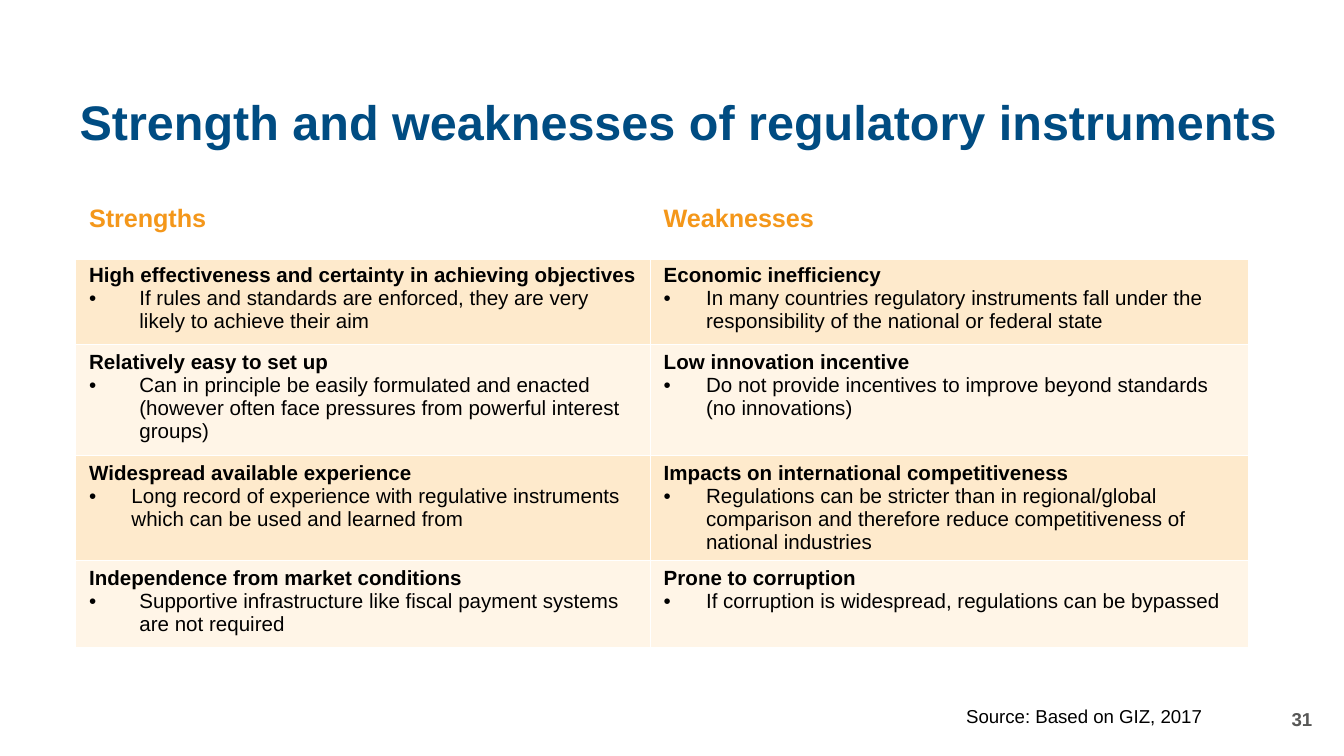
from lxml.etree import SubElement
from pptx import Presentation
from pptx.dml.color import RGBColor
from pptx.enum.text import MSO_ANCHOR as Anchor, MSO_AUTO_SIZE as AutoSize, PP_ALIGN as Align
from pptx.oxml.ns import qn
from pptx.util import Cm, Pt

BLUE = RGBColor(0x00, 0x4C, 0x82)
ORANGE = RGBColor(0xF4, 0x97, 0x1A)
PEACH = RGBColor(0xFE, 0xEA, 0xCC)
CREAM = RGBColor(0xFF, 0xF5, 0xE7)
GREY = RGBColor(0x57, 0x57, 0x56)
BLACK = RGBColor(0, 0, 0)
WHITE = RGBColor(0xFF, 0xFF, 0xFF)

WIDE, NARROW = 0.95, 0.8
HEADERS = ["Strengths", "Weaknesses"]
ROWS = [
    [("High effectiveness and certainty in achieving objectives",
      "If rules and standards are enforced, they are very likely to achieve their aim", WIDE),
     ("Economic inefficiency",
      "In many countries regulatory instruments fall under the responsibility of the national "
      "or federal state", NARROW)],
    [("Relatively easy to set up",
      "Can in principle be easily formulated and enacted (however often face pressures from "
      "powerful interest groups)", WIDE),
     ("Low innovation incentive",
      "Do not provide incentives to improve beyond standards (no innovations)", NARROW)],
    [("Widespread available experience",
      "Long record of experience with regulative instruments which can be used and learned from",
      NARROW),
     ("Impacts on international competitiveness",
      "Regulations can be stricter than in regional/global comparison and therefore reduce "
      "competitiveness of national industries", NARROW)],
    [("Independence from market conditions",
      "Supportive infrastructure like fiscal payment systems are not required", WIDE),
     ("Prone to corruption",
      "If corruption is widespread, regulations can be bypassed", NARROW)],
]


class Deck:
    """Holds the text style and the current slide, and adds elements to it."""

    font = "Arial"

    def __init__(self, width, height):
        self.prs = Presentation()
        self.prs.slide_width, self.prs.slide_height = Cm(width), Cm(height)
        self.s = self.prs.slides.add_slide(self.prs.slide_layouts[5])

    def style(self, p, size, color, bold=False):
        for r in p.runs:
            r.font.name, r.font.size, r.font.bold = self.font, Pt(size), bold
            r.font.color.rgb = color

    def title(self, text, left, top, width, height):
        sp = self.s.shapes.title
        sp.left, sp.top, sp.width, sp.height = Cm(left), Cm(top), Cm(width), Cm(height)
        tf = sp.text_frame
        tf.text = text
        tf.vertical_anchor = Anchor.MIDDLE
        tf.auto_size = AutoSize.NONE
        p = tf.paragraphs[0]
        p.alignment, p.line_spacing = Align.LEFT, 0.9
        self.style(p, 26, BLUE, True)

    def text(self, text, left, top, width, height, color, bold=False, align=Align.LEFT,
             anchor=Anchor.TOP, wrap=True):
        tf = self.s.shapes.add_textbox(Cm(left), Cm(top), Cm(width), Cm(height)).text_frame
        tf.text = text
        tf.word_wrap, tf.vertical_anchor = wrap, anchor
        tf.auto_size = AutoSize.NONE if wrap else AutoSize.SHAPE_TO_FIT_TEXT
        tf.paragraphs[0].alignment = align
        self.style(tf.paragraphs[0], 10, color, bold)

    def bullet(self, p, indent):
        pPr = p._p.get_or_add_pPr()
        pPr.set("marL", str(Cm(indent)))
        pPr.set("indent", str(-Cm(indent)))
        SubElement(pPr, qn("a:buFont"), typeface=self.font)
        SubElement(pPr, qn("a:buChar"), char="•")

    def borders(self, cell, bottom):
        tcPr = cell._tc.get_or_add_tcPr()
        for side, width in zip("LRTB", (1, 1, 1, bottom)):
            ln = SubElement(tcPr, qn(f"a:ln{side}"), w=str(Pt(width)))
            SubElement(SubElement(ln, qn("a:solidFill")), qn("a:srgbClr"), val=str(WHITE))

    def table(self, headers, rows, left, top, widths, heights):
        table = self.s.shapes.add_table(len(heights), len(widths), Cm(left), Cm(top),
                                        Cm(sum(widths)), Cm(sum(heights))).table
        table.first_row = table.horz_banding = False
        for column, width in zip(table.columns, widths):
            column.width = Cm(width)
        for row, height in zip(table.rows, heights):
            row.height = Cm(height)
        for j, header in enumerate(headers):
            cell = table.cell(0, j)
            cell.text = header
            self.style(cell.text_frame.paragraphs[0], 13.5, ORANGE, True)
            self.borders(cell, 3)
            cell.fill.background()
        for i, row in enumerate(rows, 1):
            for j, (heading, detail, indent) in enumerate(row):
                cell = table.cell(i, j)
                cell.text = f"{heading}\n{detail}"
                first, second = cell.text_frame.paragraphs
                self.bullet(second, indent)
                self.style(first, 11, BLACK, True)
                self.style(second, 11, BLACK)
                self.borders(cell, 1)
                cell.fill.solid()
                cell.fill.fore_color.rgb = PEACH if i % 2 else CREAM


def main():
    deck = Deck(25.4, 14.29)
    deck.title("Strength and weaknesses of regulatory instruments", 1.25, 1.6, 23.8, 1.5)
    deck.text("31", 19.33, 13.2, 5.72, 0.77, GREY, True, Align.RIGHT, Anchor.MIDDLE)
    deck.table(HEADERS, ROWS, 1.43, 3.74, [10.86, 11.32], [1.13, 1.64, 2.1, 1.65, 1.65])
    deck.text("Source: Based on GIZ, 2017", 18.01, 13.2, 5, 0.68, BLACK, wrap=False)
    deck.prs.save("out.pptx")


if __name__ == "__main__":
    main()
